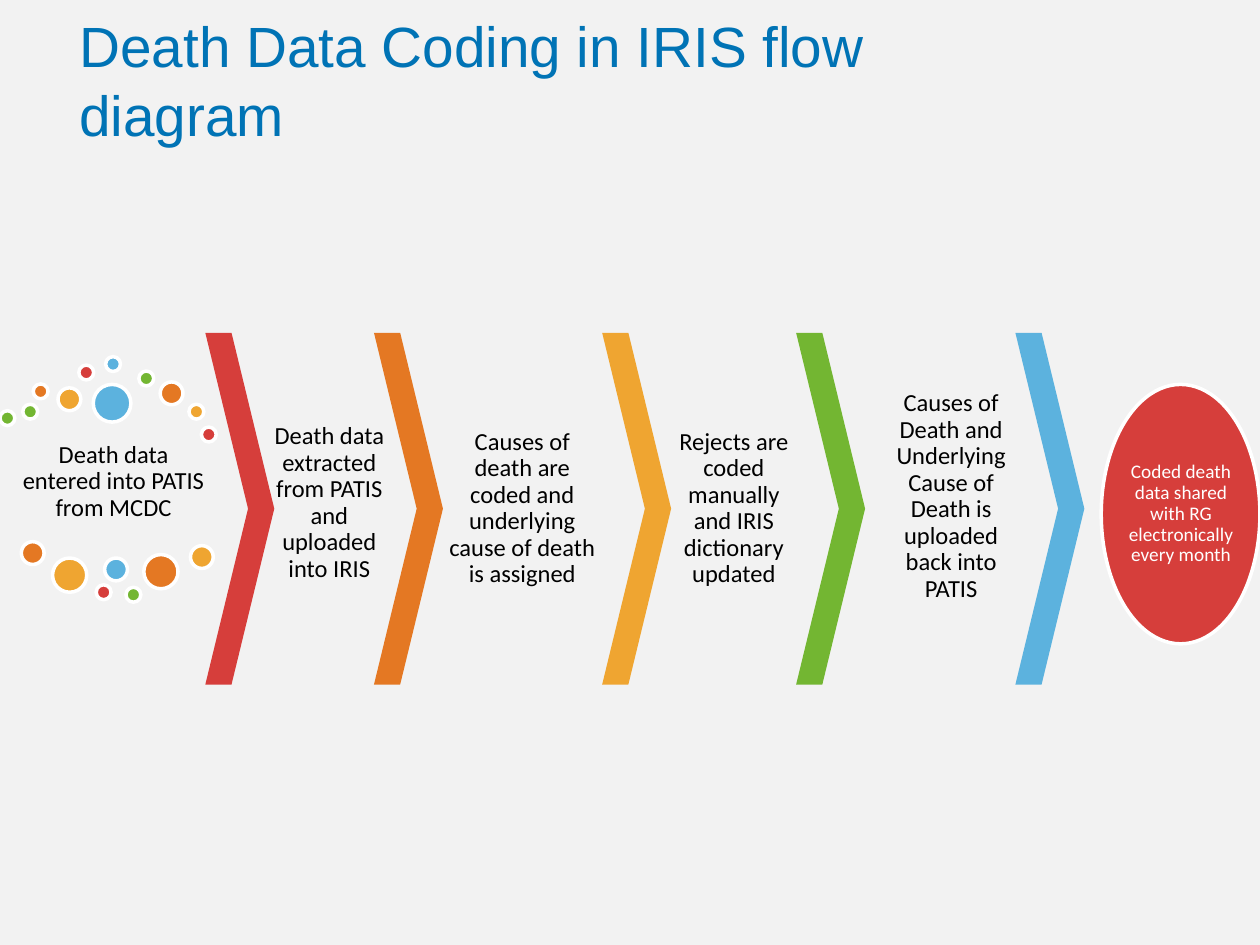
from dataclasses import dataclass

from pptx import Presentation
from pptx.dml.color import RGBColor
from pptx.enum.shapes import MSO_SHAPE
from pptx.enum.text import MSO_ANCHOR, PP_ALIGN
from pptx.util import Cm, Pt


@dataclass(frozen=True)
class Theme:
    background: str = "F2F2F2"
    title: str = "0073B5"
    text: str = "000000"
    white: str = "FFFFFF"
    red: str = "D63E3B"
    orange: str = "E47823"
    yellow: str = "EFA531"
    green: str = "73B632"
    blue: str = "5CB2DE"
    title_font: str = "Arial"
    body_font: str = "Calibri"
    title_size: float = 32.4
    step_size: float = 14
    result_size: float = 11


THEME = Theme()

SMALL, MEDIUM, LARGE, HUB = 0.3, 0.46, 0.69, 0.76

# left, top, diameter, colour
DOTS = [
    (0.46, 8.15, SMALL, THEME.green),
    (0.67, 7.74, SMALL, THEME.orange),
    (1.17, 7.82, MEDIUM, THEME.yellow),
    (1.59, 7.36, SMALL, THEME.red),
    (2.13, 7.19, SMALL, THEME.blue),
    (2.8, 7.48, SMALL, THEME.green),
    (3.23, 7.7, MEDIUM, THEME.orange),
    (3.81, 8.15, SMALL, THEME.yellow),
    (4.06, 8.61, SMALL, THEME.red),
    (1.88, 7.75, HUB, THEME.blue),
    (0, 8.28, SMALL, THEME.green),
    (0.43, 10.92, MEDIUM, THEME.orange),
    (1.06, 11.25, LARGE, THEME.yellow),
    (1.94, 11.79, SMALL, THEME.red),
    (2.11, 11.25, MEDIUM, THEME.blue),
    (2.54, 11.84, SMALL, THEME.green),
    (2.9, 11.18, LARGE, THEME.orange),
    (3.84, 11.0, MEDIUM, THEME.yellow),
]

CHEVRON_TOP, CHEVRON_WIDTH, CHEVRON_HEIGHT = 6.71, 1.39, 7.09
CHEVRONS = [
    (4.14, THEME.red),
    (7.54, THEME.orange),
    (12.14, THEME.yellow),
    (16.05, THEME.green),
    (20.47, THEME.blue),
]

# text, left, top, width, height
STEPS = [
    ("Death data entered into PATIS from MCDC", 0.41, 9.09, 3.76, 1.24),
    ("Death data extracted from PATIS and uploaded into IRIS", 5.41, 6.6, 2.46, 7.09),
    ("Causes of death are coded and underlying cause of death is assigned",
     8.94, 6.71, 3.18, 7.09),
    ("Rejects are coded manually and IRIS dictionary updated", 13.54, 6.71, 2.51, 7.09),
    ("Causes of Death and Underlying Cause of Death is uploaded back into PATIS",
     17.88, 6.71, 2.59, 6.6),
]


def add_text(slide, text, left, top, width, height, size, color, font, inset):
    box = slide.shapes.add_textbox(Cm(left), Cm(top), Cm(width), Cm(height))
    text_frame = box.text_frame
    text_frame.word_wrap = True
    text_frame.vertical_anchor = MSO_ANCHOR.MIDDLE
    text_frame.margin_left = text_frame.margin_right = Cm(inset)
    text_frame.margin_top = text_frame.margin_bottom = Cm(inset)
    text_frame.text = text
    paragraph = text_frame.paragraphs[0]
    for run in paragraph.runs:
        run.font.name = font
        run.font.size = Pt(size)
        run.font.color.rgb = RGBColor.from_string(color)
    return paragraph


def add_title(slide, text):
    add_text(slide, text, 1.35, 0.25, 20.68, 2.7,
             THEME.title_size, THEME.title, THEME.title_font, 0.25)


def add_label(slide, text, left, top, width, height,
              size=THEME.step_size, color=THEME.text, inset=0.05):
    paragraph = add_text(slide, text, left, top, width, height,
                         size, color, THEME.body_font, inset)
    paragraph.alignment = PP_ALIGN.CENTER
    paragraph.line_spacing = 0.9


def add_filled(slide, kind, left, top, width, height, color):
    shape = slide.shapes.add_shape(kind, Cm(left), Cm(top), Cm(width), Cm(height))
    shape.shadow.inherit = False
    shape.fill.solid()
    shape.fill.fore_color.rgb = RGBColor.from_string(color)
    return shape


def add_ellipse(slide, left, top, width, height, color):
    ellipse = add_filled(slide, MSO_SHAPE.OVAL, left, top, width, height, color)
    ellipse.line.color.rgb = RGBColor.from_string(THEME.white)
    ellipse.line.width = Pt(2)


def add_chevron(slide, left, color):
    chevron = add_filled(slide, MSO_SHAPE.CHEVRON, left, CHEVRON_TOP,
                         CHEVRON_WIDTH, CHEVRON_HEIGHT, color)
    chevron.adjustments[0] = 0.62
    chevron.line.fill.background()


def main():
    presentation = Presentation()
    presentation.slide_width = Cm(25.4)
    presentation.slide_height = Cm(19.05)
    slide = presentation.slides.add_slide(presentation.slide_layouts[6])
    slide.background.fill.solid()
    slide.background.fill.fore_color.rgb = RGBColor.from_string(THEME.background)

    for left, top, diameter, color in DOTS:
        add_ellipse(slide, left, top, diameter, diameter, color)
    for left, color in CHEVRONS:
        add_chevron(slide, left, color)
    for step in STEPS:
        add_label(slide, *step)

    add_ellipse(slide, 22.2, 7.75, 3.2, 5.23, THEME.red)
    add_label(slide, "Coded death data shared with RG electronically every month",
              22.68, 8.51, 2.26, 3.71, THEME.result_size, THEME.white, inset=0)
    add_title(slide, "Death Data Coding in IRIS flow diagram")
    presentation.save("out.pptx")


if __name__ == "__main__":
    main()
